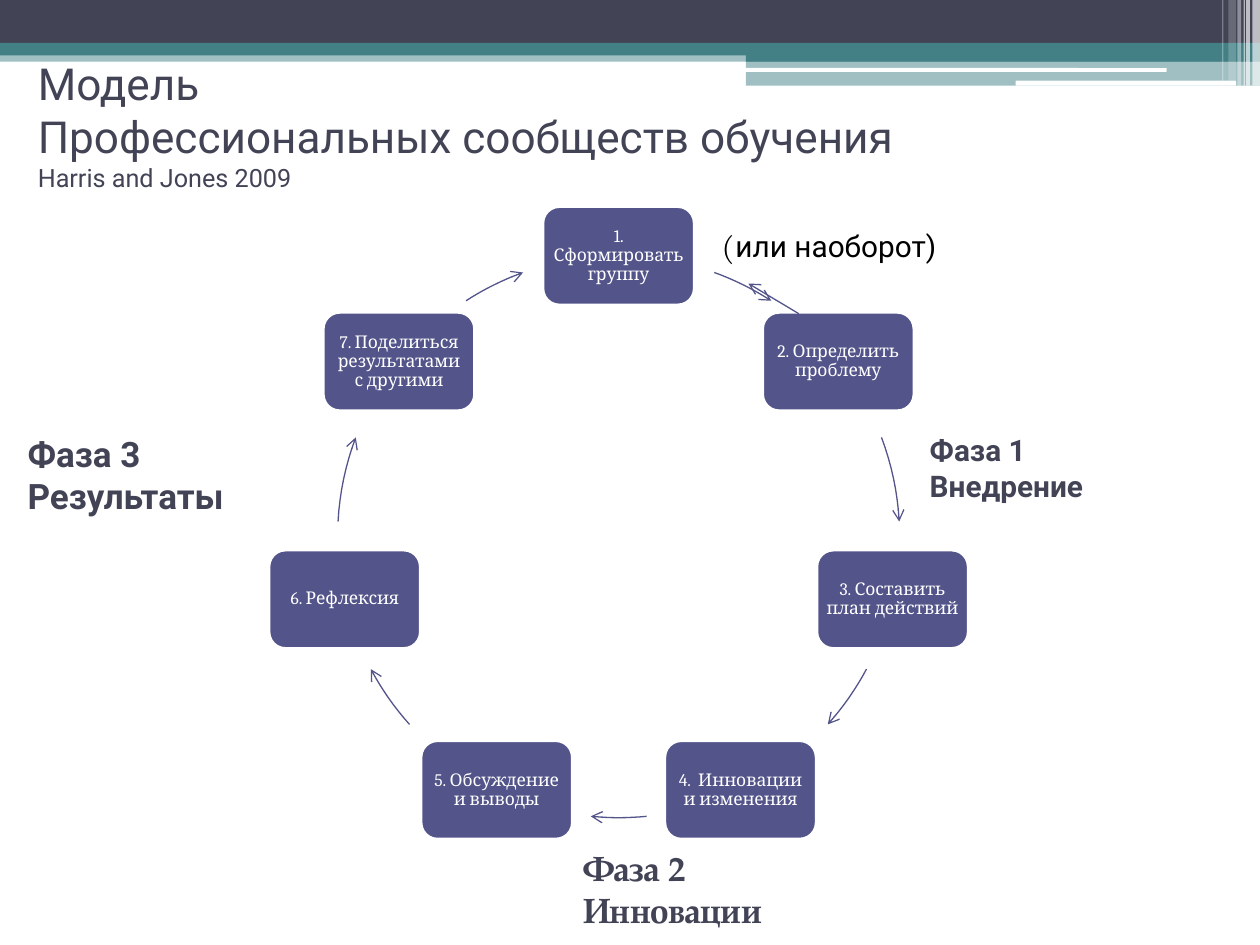
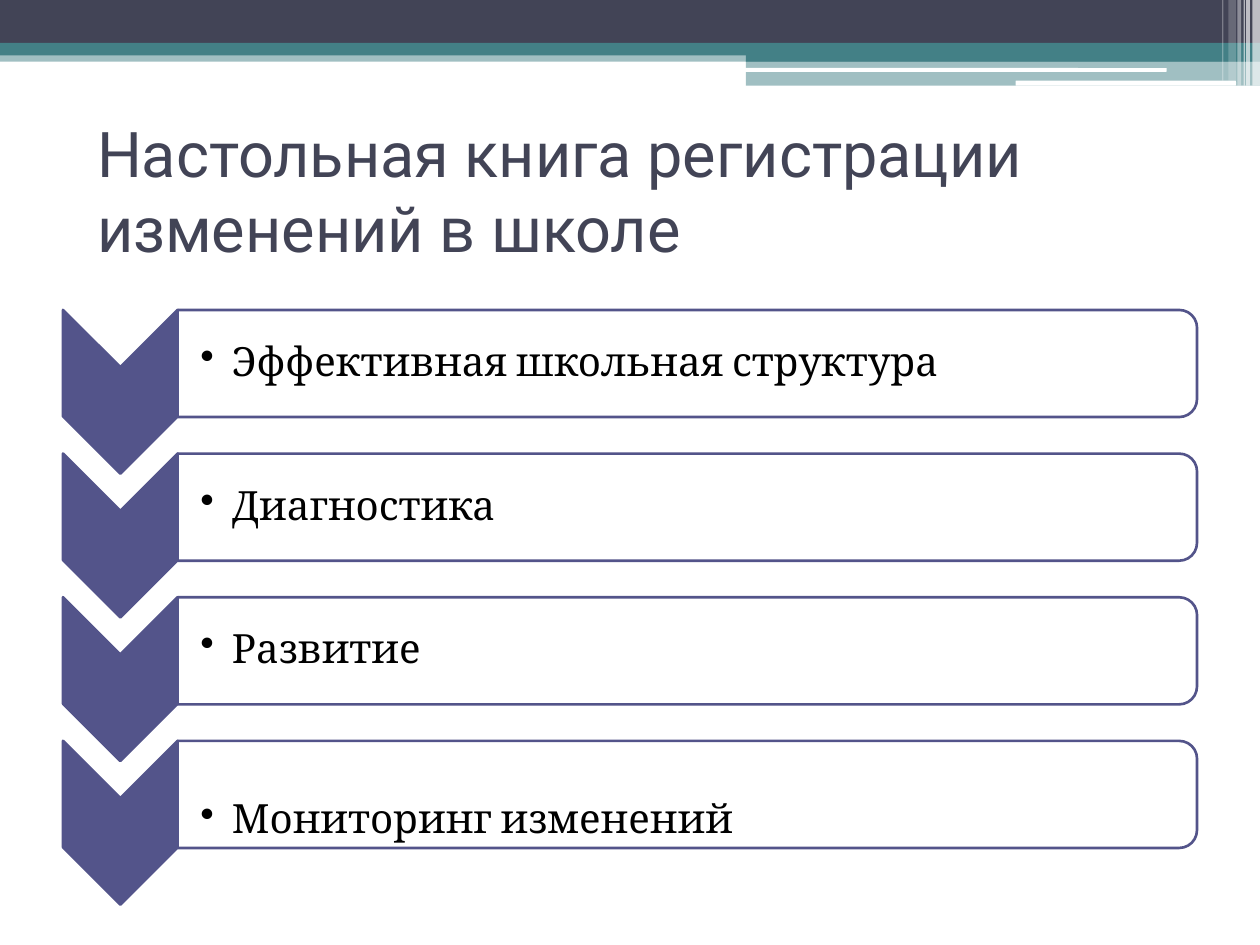
from math import cos, radians, sin

from lxml.etree import SubElement
from pptx import Presentation
from pptx.dml.color import RGBColor
from pptx.enum.shapes import MSO_CONNECTOR, MSO_SHAPE
from pptx.enum.text import MSO_ANCHOR, MSO_AUTO_SIZE, PP_ALIGN
from pptx.oxml.ns import qn
from pptx.util import Inches, Pt

COLORS = {"ink": "424456", "teal": "438086", "violet": "53548A",
          "white": "FFFFFF", "black": "000000"}
SANS, SERIF, BOOK = "Roboto", "Cambria", "TeX Gyre Pagella"
WIDTH, HEIGHT = 10, 7.5


def add_block(slide, preset, box, fill, opacity=100, outline=None):
    """Add a flat preset shape; box is left, top, width, height in inches."""
    block = slide.shapes.add_shape(preset, *map(Inches, box))
    block.shadow.inherit = False
    block.fill.solid()
    block.fill.fore_color.rgb = RGBColor.from_string(COLORS[fill])
    if opacity < 100:
        color = block.element.spPr.find(".//" + qn("a:srgbClr"))
        SubElement(color, qn("a:alpha"), val=str(opacity * 1000))
    if outline:
        block.line.color.rgb = RGBColor.from_string(COLORS[outline])
        block.line.width = Pt(1.5)
    else:
        block.line.fill.background()
    return block


def write(shape, lines, size, font, color, bold=False,
          align=PP_ALIGN.LEFT, anchor=MSO_ANCHOR.MIDDLE):
    """Fill a shape with one paragraph per line and return the paragraphs."""
    frame = shape.text_frame
    frame.word_wrap = True
    frame.auto_size = MSO_AUTO_SIZE.NONE
    frame.vertical_anchor = anchor
    for number, line in enumerate(lines):
        paragraph = frame.add_paragraph() if number else frame.paragraphs[0]
        paragraph.text = line
        paragraph.alignment = align
        paragraph.font.size = Pt(size)
        paragraph.font.name = font
        paragraph.font.bold = bold
        paragraph.font.color.rgb = RGBColor.from_string(COLORS[color])
    return frame.paragraphs


deck = Presentation()
deck.slide_width, deck.slide_height = Inches(WIDTH), Inches(HEIGHT)
title_only = deck.slide_layouts[5]
cycle_slide = deck.slides.add_slide(title_only)
handbook_slide = deck.slides.add_slide(title_only)

# Header bands, moved to the layout that both slides share
RECT, ROUND = MSO_SHAPE.RECTANGLE, MSO_SHAPE.ROUNDED_RECTANGLE
bands = [
    (RECT, (0, 0.4, WIDTH, 0.09), "teal", 50),
    (RECT, (0, 0, WIDTH, 0.34), "ink", 100),
    (RECT, (0, 0.34, WIDTH, 0.1), "teal", 100),
    (RECT, (5.92, 0.39, 4.08, 0.1), "teal", 100),
    (RECT, (5.92, 0.48, 4.08, 0.2), "teal", 50),
    (ROUND, (5.91, 0.54, 3.35, 0.03), "white", 100),
    (ROUND, (8.06, 0.64, 1.75, 0.04), "white", 100),
]
stripes = [(9.94, 0.06, 0.68, 65), (9.89, 0.03, 0.68, 65),
           (9.87, 0.01, 0.68, 60), (9.82, 0.03, 0.68, 40),
           (9.75, 0.06, 0.64, 20), (9.7, 0.01, 0.64, 30)]
bands += [(RECT, (left, 0, width, height), "white", opacity)
          for left, width, height, opacity in stripes]
for band in bands:
    title_only.shapes.element.append(add_block(cycle_slide, *band).element)

# Titles
titles = [
    (cycle_slide, (0.2, 0.36, 8.5, 1.25), 25.2,
     "Модель \nПрофессиональных сообществ обучения\nHarris and Jones 2009"),
    (handbook_slide, (0.67, 0.92, 9, 1.17), 36,
     "Настольная книга регистрации изменений в школе"),
]
for slide, box, size, wording in titles:
    title = slide.shapes.title
    title.left, title.top, title.width, title.height = map(Inches, box)
    write(title, [wording], size, SANS, "ink")
citation = cycle_slide.shapes.title.text_frame.paragraphs[0].runs[-1]
citation.font.size = Pt(14.4)

# Slide 1: seven steps on a ring, clockwise from the top
CENTER_X, CENTER_Y, RADIUS = 4.91, 4.26, 2.23
STEP_WIDTH, STEP_HEIGHT = 1.2, 0.78
steps = ["1. Сформировать группу", "2. Определить проблему",
         "3. Составить план действий", "4.  Инновации и изменения",
         "5. Обсуждение и выводы", "6. Рефлексия",
         "7. Поделиться результатами с другими"]
for number, wording in enumerate(steps):
    angle = radians(360 / len(steps) * number)
    left = CENTER_X + RADIUS * sin(angle) - STEP_WIDTH / 2
    top = CENTER_Y - RADIUS * cos(angle) - STEP_HEIGHT / 2
    step = add_block(cycle_slide, ROUND, (left, top, STEP_WIDTH, STEP_HEIGHT),
                     "violet", outline="white")
    frame = step.text_frame
    frame.margin_left = frame.margin_right = Inches(0.03)
    frame.margin_top = frame.margin_bottom = Inches(0.03)
    write(step, [wording], 10, SERIF, "white",
          align=PP_ALIGN.CENTER)[0].line_spacing = 0.9

# Arcs between the steps, in degrees; the left half mirrors the right one
right_arcs = [(19.9, 32.9), (69.3, 86.9), (118.1, 131.9)]
left_arcs = [(360 - end, 360 - start) for start, end in reversed(right_arcs)]
ARC_PARTS = 8
arrows = []
for start, end in right_arcs + [(174.3, 185.7)] + left_arcs:
    angles = [radians(start + (end - start) * part / ARC_PARTS)
              for part in range(ARC_PARTS + 1)]
    points = [(Inches(CENTER_X + RADIUS * sin(angle)),
               Inches(CENTER_Y - RADIUS * cos(angle))) for angle in angles]
    outline = cycle_slide.shapes.build_freeform(*points[0])
    outline.add_line_segments(points[1:], close=False)
    arc = outline.convert_to_shape()
    arc.fill.background()
    arrows.append(arc)
arrows.append(cycle_slide.shapes.add_connector(
    MSO_CONNECTOR.STRAIGHT, *map(Inches, (6.34, 2.49, 5.94, 2.25))))
for arrow in arrows:
    arrow.line.color.rgb = RGBColor.from_string(COLORS["violet"])
    arrow.line.width = Pt(0.75)
    properties = arrow.element.spPr
    SubElement(properties.find(qn("a:ln")), qn("a:tailEnd"), type="arrow")
    SubElement(properties, qn("a:effectLst"))

phases = [
    (["Фаза 1", "Внедрение"], (7.28, 3.38, 2.09, 0.67), 17, SANS),
    (["Фаза 2", "Инновации"], (4.53, 6.67, 2.12, 0.77), 20, BOOK),
    (["Фаза 3", "Результаты"], (0.12, 3.38, 1.95, 0.77), 20, SANS),
]
for lines, box, size, font in phases:
    phase = cycle_slide.shapes.add_textbox(*map(Inches, box))
    write(phase, lines, size, font, "ink", bold=True, anchor=MSO_ANCHOR.TOP)

remark = cycle_slide.shapes.add_textbox(*map(Inches, (5.63, 1.76, 2.52, 0.39)))
remark_line = write(remark, ["("], 17, BOOK, "black", anchor=MSO_ANCHOR.TOP)[0]
remark_words = remark_line.add_run()
remark_words.text = "или наоборот)"
remark_words.font.name = SANS

# Slide 2: chevrons and bars; both presets are drawn upright and turned by 90°
FIRST_ROW, ROW_PITCH = 2.46, 1.14
BAR_LEFT, BAR_WIDTH, BAR_HEIGHT = 1.41, 8.09, 0.85
CHEVRON_LENGTH, CHEVRON_WIDTH, CHEVRON_LEFT = 1.3, 0.91, 0.5
topics = ["Эффективная школьная структура", "Диагностика", "Развитие",
          "Мониторинг изменений"]
for row, wording in enumerate(topics):
    top = FIRST_ROW + ROW_PITCH * row
    chevron_box = (CHEVRON_LEFT - (CHEVRON_LENGTH - CHEVRON_WIDTH) / 2,
                   top + (CHEVRON_LENGTH - CHEVRON_WIDTH) / 2,
                   CHEVRON_LENGTH, CHEVRON_WIDTH)
    bar_box = (BAR_LEFT + (BAR_WIDTH - BAR_HEIGHT) / 2,
               top - (BAR_WIDTH - BAR_HEIGHT) / 2, BAR_HEIGHT, BAR_WIDTH)
    for preset, box, fill, opacity in [
            (MSO_SHAPE.CHEVRON, chevron_box, "violet", 100),
            (MSO_SHAPE.ROUND_2_SAME_RECTANGLE, bar_box, "white", 90)]:
        add_block(handbook_slide, preset, box, fill, opacity, "violet").rotation = 90

    drop = 0.21 if wording == topics[-1] else 0  # the last topic sits lower
    topic = handbook_slide.shapes.add_textbox(
        *map(Inches, (BAR_LEFT, top + drop, BAR_WIDTH, BAR_HEIGHT)))
    topic.text_frame.margin_left = Inches(0.18)
    topic_line = write(topic, [wording], 23, SERIF, "black")[0]
    topic_line.line_spacing = 0.9
    indents = topic_line._p.get_or_add_pPr()
    indents.set("marL", str(Inches(0.25)))
    indents.set("indent", str(-Inches(0.25)))
    bullet = SubElement(indents, qn("a:buChar"), char="•")
    indents.find(qn("a:defRPr")).addprevious(bullet)

deck.save("out.pptx")
